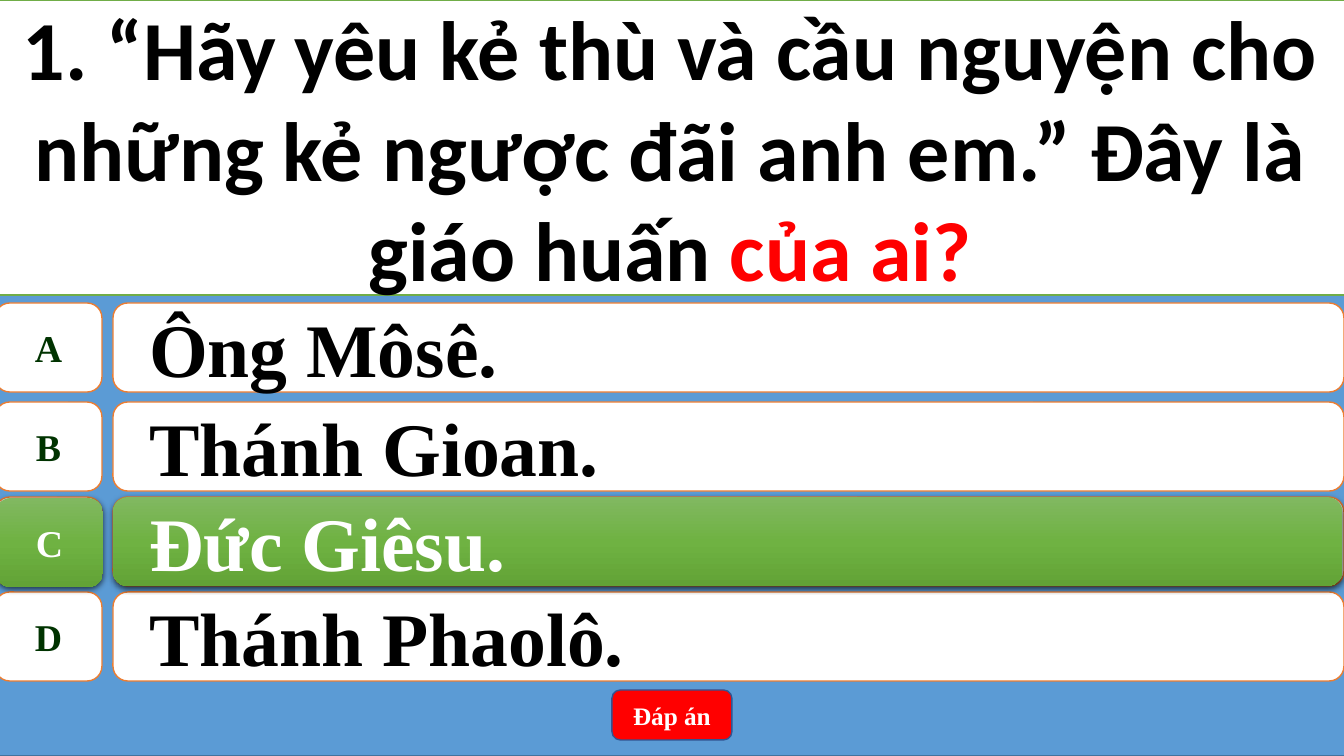
from lxml.etree import SubElement
from pptx import Presentation
from pptx.dml.color import RGBColor
from pptx.enum.shapes import MSO_SHAPE
from pptx.enum.text import MSO_ANCHOR, MSO_AUTO_SIZE, PP_ALIGN
from pptx.oxml.ns import qn
from pptx.util import Pt

WHITE = RGBColor(255, 255, 255)
BLACK = RGBColor(0, 0, 0)
RED = RGBColor(255, 0, 0)
BLUE = RGBColor(0x5B, 0x9B, 0xD5)
NAVY = RGBColor(0x43, 0x73, 0x9E)
STEEL = RGBColor(0x32, 0x54, 0x91)
ORANGE = RGBColor(0xED, 0x7D, 0x31)
GREEN = RGBColor(0x70, 0xAD, 0x47)
DARK = RGBColor(0, 0x33, 0)
SHADES = [(0, RGBColor(0x81, 0xB8, 0x61)),
          (50, RGBColor(0x6F, 0xB2, 0x42)),
          (100, RGBColor(0x62, 0xA3, 0x36))]

ASK = [("1. “Hãy yêu kẻ thù và cầu nguyện cho những kẻ ngược đãi anh em.” "
        "Đây là giáo huấn ", BLACK), ("của ai?", RED)]
ROWS = [("A", "Ông Môsê.", 303), ("B", "Thánh Gioan.", 402),
        ("C", "Đức Giêsu.", 497), ("D", "Thánh Phaolô.", 592)]
RIGHT = 2
BUTTON = "Đáp án"
WIDE, HIGH = 1344, 756
SERIF = "Times New Roman"
KEY = {"name": SERIF, "size": Pt(27), "bold": True}
REPLY = {"name": SERIF, "size": Pt(54), "bold": True}
LABEL = {"name": SERIF, "size": Pt(18), "bold": True}
TITLE = {"name": "Calibri", "size": Pt(60), "bold": True}


def px(n):
    return round(n * 914400 / 100.8)


def paint(shape, fill, line):
    shape.fill.solid()
    shape.fill.fore_color.rgb = fill
    shape.line.color.rgb = line
    shape.line.width = Pt(1)


def add(home, kind, box, fill, line):
    shape = home.add_shape(kind, *map(px, box))
    shape.shadow.inherit = False
    paint(shape, fill, line)
    return shape


def write(shape, runs, style, align=PP_ALIGN.CENTER, wrap=True):
    frame = shape.text_frame
    frame.word_wrap = wrap
    frame.vertical_anchor = MSO_ANCHOR.MIDDLE
    para = frame.paragraphs[0]
    para.alignment = align
    for text, color in runs:
        run = para.add_run()
        run.text = text
        for name, value in style.items():
            setattr(run.font, name, value)
        run.font.color.rgb = color
    return para


def glow(shape):
    shape.line.fill.background()
    shape.fill.gradient()
    shape.fill.gradient_angle = 270
    props = shape._element.spPr
    stops = props.find(".//" + qn("a:gsLst"))
    for stop in list(stops):
        stops.remove(stop)
    for spot, color in SHADES:
        stop = SubElement(stops, qn("a:gs"), pos=str(spot * 1000))
        SubElement(stop, qn("a:srgbClr"), val=str(color))
    shade = SubElement(props.find(qn("a:effectLst")), qn("a:outerShdw"),
                       blurRad=str(Pt(4.5)), dist=str(Pt(1.5)),
                       dir="5400000", algn="ctr", rotWithShape="0")
    tint = SubElement(shade, qn("a:srgbClr"), val=str(BLACK))
    SubElement(tint, qn("a:alpha"), val="63000")


def answer(slide, row, lit=False):
    mark, text, top = row
    home = slide.shapes.add_group_shape().shapes
    key = add(home, MSO_SHAPE.FLOWCHART_ALTERNATE_PROCESS,
              (-4 if lit else -5, top + lit, 107, 89), WHITE, ORANGE)
    bar = add(home, MSO_SHAPE.ROUNDED_RECTANGLE,
              (113, top, 1229 if lit else 1231, 89), WHITE, ORANGE)
    write(key, [(mark, WHITE if lit else DARK)], KEY, wrap=False)
    para = write(bar, [(text, WHITE if lit else BLACK)], REPLY, PP_ALIGN.LEFT)
    para.level = 1
    props = para._p.get_or_add_pPr()
    props.set("marL", str(px(50)))
    props.set("indent", str(px(-28)))
    if lit:
        glow(key)
        glow(bar)


def main():
    deck = Presentation()
    deck.slide_width, deck.slide_height = px(WIDE), px(HIGH)
    slide = deck.slides.add_slide(deck.slide_layouts[5])
    shapes = slide.shapes
    add(shapes, MSO_SHAPE.RECTANGLE, (-5, 0, 1350, HIGH), BLUE, NAVY)
    for row in ROWS:
        answer(slide, row)
    button = add(shapes, MSO_SHAPE.ROUNDED_RECTANGLE, (612, 690, 120, 50),
                 RED, STEEL)
    write(button, [(BUTTON, WHITE)], LABEL)
    answer(slide, ROWS[RIGHT], lit=True)

    title = shapes.title
    title.left, title.top, title.width, title.height = map(
        px, (-5, 0, 1350, 295))
    paint(title, WHITE, GREEN)
    title.text_frame.auto_size = MSO_AUTO_SIZE.NONE
    write(title, ASK, TITLE)
    shapes._spTree.append(title._element)
    deck.save("out.pptx")


if __name__ == "__main__":
    main()
